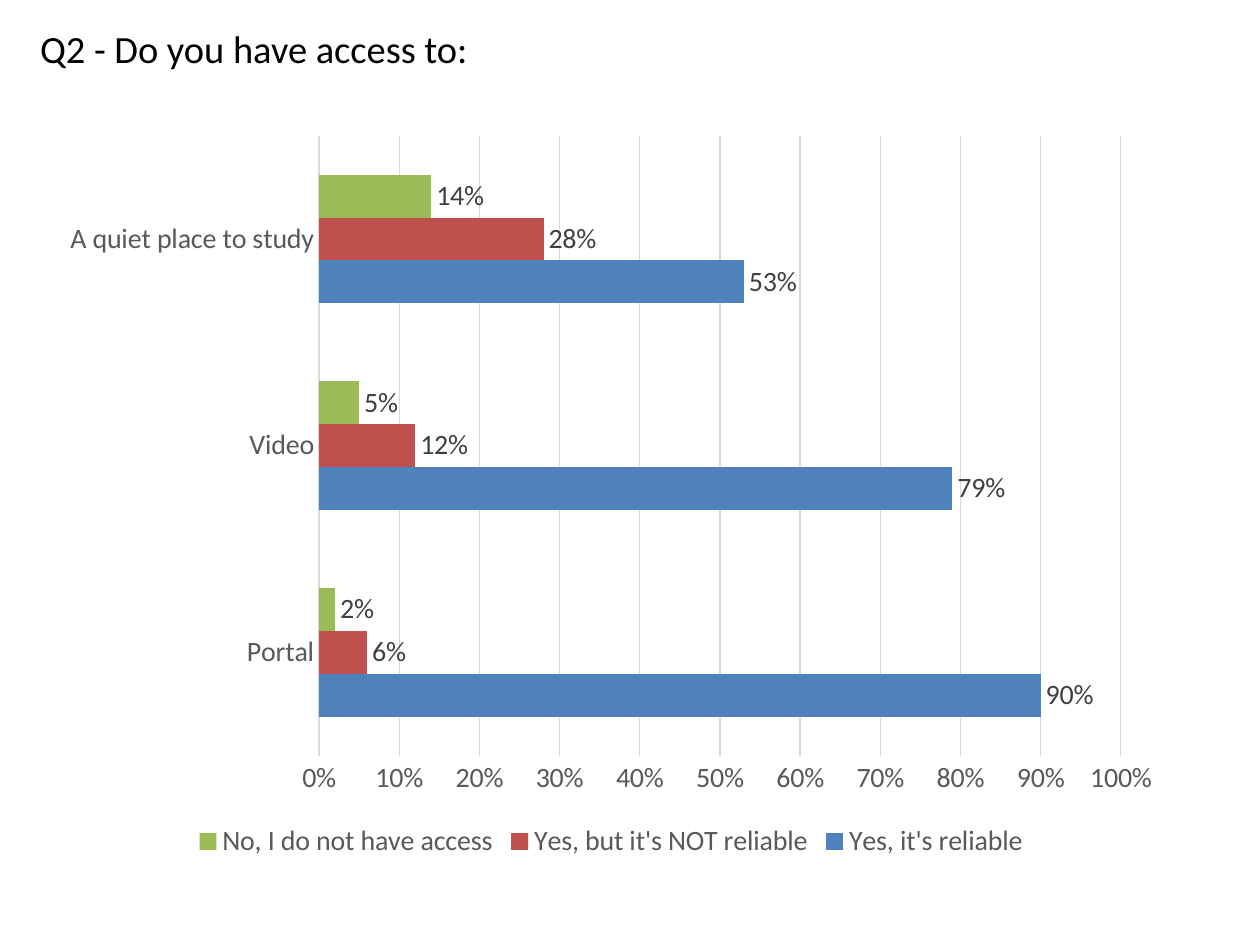
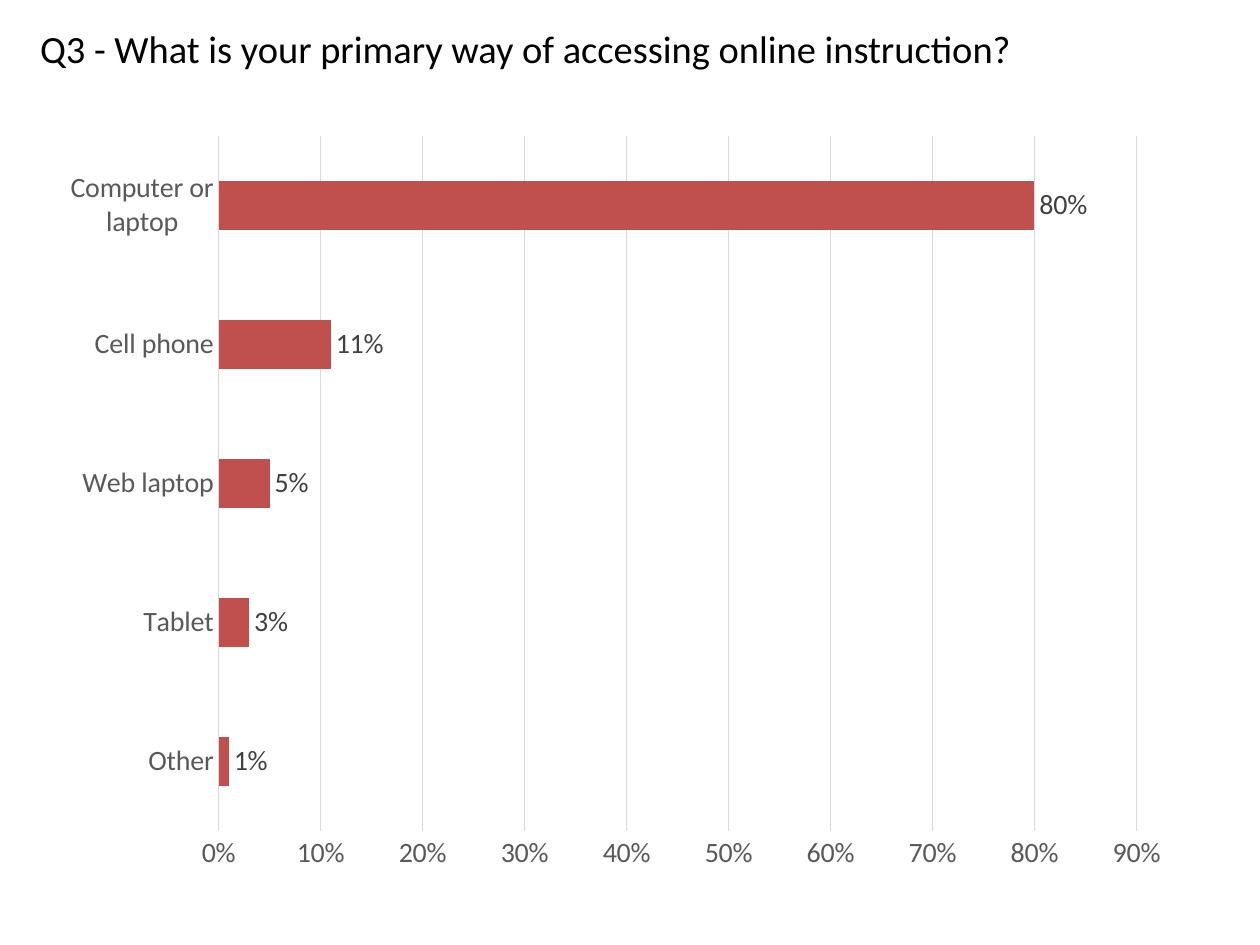
from dataclasses import dataclass

from pptx import Presentation
from pptx.chart.data import CategoryChartData
from pptx.dml.color import RGBColor
from pptx.enum.chart import (XL_CHART_TYPE, XL_LABEL_POSITION,
                             XL_LEGEND_POSITION, XL_TICK_MARK)
from pptx.util import Inches, Pt


@dataclass(frozen=True)
class Theme:
    font: str = "Calibri"
    title_size: int = 22
    chart_size: int = 16
    title: str = "000000"
    axis_text: str = "595959"
    label_text: str = "404040"
    grid: str = "D9D9D9"
    blue: str = "4F81BD"
    red: str = "C0504D"
    green: str = "9BBB59"


THEME = Theme()
PERCENT = "0%"


def style_font(font, size, color):
    font.name = THEME.font
    font.size = Pt(size)
    font.bold = False
    font.color.rgb = RGBColor.from_string(color)


def style_line(line):
    line.color.rgb = RGBColor.from_string(THEME.grid)
    line.width = Pt(0.75)


def add_question(slide, text):
    box = slide.shapes.add_textbox(Inches(0.22), Inches(0.15), Inches(9), Inches(0.4))
    box.text_frame.word_wrap = True
    run = box.text_frame.paragraphs[0].add_run()
    run.text = text
    style_font(run.font, THEME.title_size, THEME.title)


def style_axes(chart, maximum):
    categories, values = chart.category_axis, chart.value_axis
    for axis in (categories, values):
        axis.major_tick_mark = axis.minor_tick_mark = XL_TICK_MARK.NONE
        style_font(axis.tick_labels.font, THEME.chart_size, THEME.axis_text)
    categories.has_major_gridlines = False
    style_line(categories.format.line)

    values.minimum_scale, values.maximum_scale, values.major_unit = 0, maximum, 0.1
    values.has_major_gridlines = True
    style_line(values.major_gridlines.format.line)
    values.format.line.fill.background()
    values.tick_labels.number_format = PERCENT
    values.tick_labels.number_format_is_linked = False


def style_series(series, color):
    series.format.fill.solid()
    series.format.fill.fore_color.rgb = RGBColor.from_string(color)
    labels = series.data_labels
    labels.show_value = True
    labels.position = XL_LABEL_POSITION.OUTSIDE_END
    labels.number_format = PERCENT
    labels.number_format_is_linked = False
    style_font(labels.font, THEME.chart_size, THEME.label_text)


def add_legend(chart):
    chart.has_legend = True
    chart.legend.position = XL_LEGEND_POSITION.BOTTOM
    chart.legend.include_in_layout = False
    style_font(chart.legend.font, THEME.chart_size, THEME.axis_text)


def add_bar_chart(slide, width, height, categories, answers, maximum):
    """answers holds one (name, color, values) entry per series."""
    data = CategoryChartData(number_format=PERCENT)
    data.categories = categories
    for name, _, values in answers:
        data.add_series(name, values)
    chart = slide.shapes.add_chart(
        XL_CHART_TYPE.BAR_CLUSTERED, Inches(0.38), Inches(0.96),
        Inches(width), Inches(height), data).chart
    style_font(chart.font, THEME.chart_size, THEME.title)
    chart.has_title = False
    chart.has_legend = False
    plot = chart.plots[0]
    plot.gap_width = 182
    plot.vary_by_categories = False
    for series, (_, color, _) in zip(plot.series, answers):
        style_series(series, color)
    style_axes(chart, maximum)
    return chart


def add_question_slide(presentation, question):
    slide = presentation.slides.add_slide(presentation.slide_layouts[6])
    add_question(slide, question)
    return slide


def main():
    presentation = Presentation()
    presentation.slide_width, presentation.slide_height = Inches(10), Inches(7.5)

    # Access to study resources
    slide = add_question_slide(presentation, "Q2 - Do you have access to:")
    access_chart = add_bar_chart(
        slide, 8.94, 5.9, ["Portal", "Video", "A quiet place to study"],
        [("Yes, it's reliable", THEME.blue, (0.9, 0.79, 0.53)),
         ("Yes, but it's NOT reliable", THEME.red, (0.06, 0.12, 0.28)),
         ("No, I do not have access", THEME.green, (0.02, 0.05, 0.14))],
        maximum=1)
    add_legend(access_chart)

    # Primary device
    slide = add_question_slide(
        presentation, "Q3 - What is your primary way of accessing online instruction?")
    add_bar_chart(
        slide, 9.01, 6.07,
        ["Other", "Tablet", "Web laptop", "Cell phone", "Computer or laptop"],
        [("Series 1", THEME.red, (0.01, 0.03, 0.05, 0.11, 0.8))],
        maximum=0.9)

    presentation.save("out.pptx")


if __name__ == "__main__":
    main()
